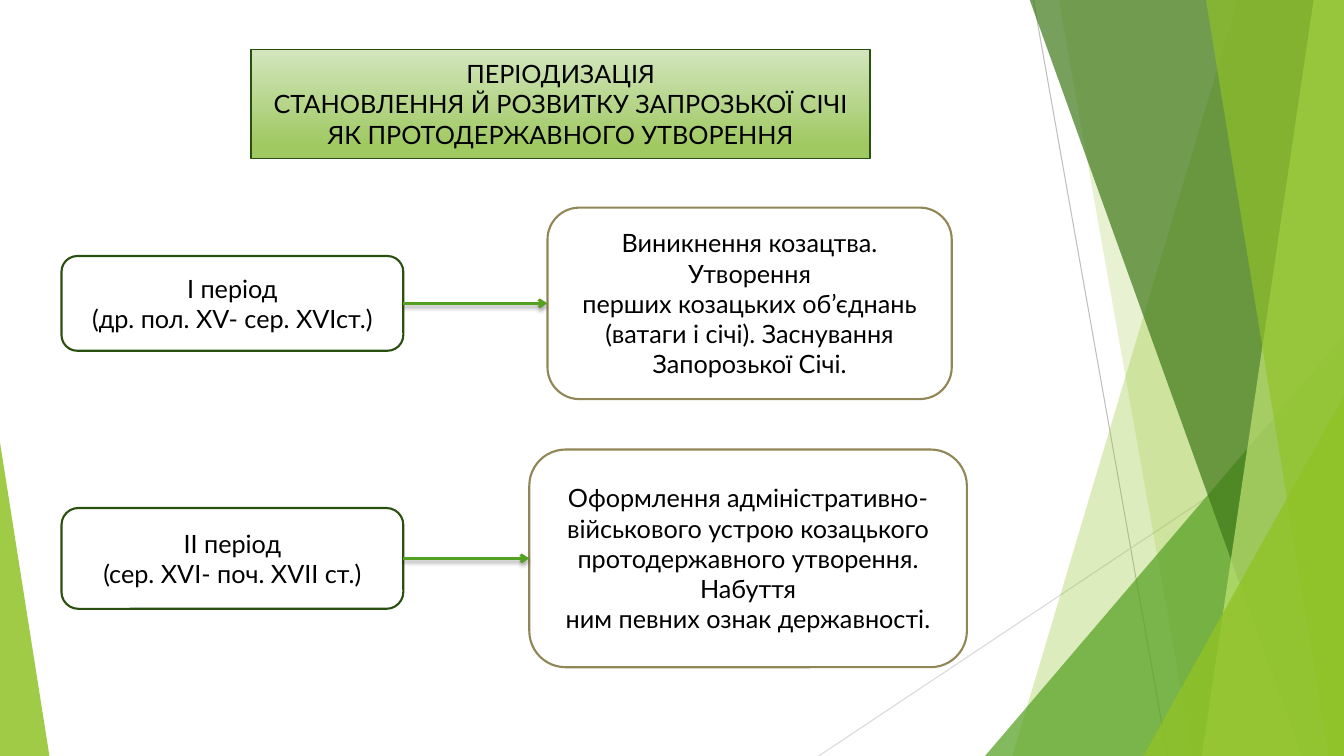
from dataclasses import dataclass

from lxml.etree import SubElement
from pptx import Presentation
from pptx.dml.color import RGBColor
from pptx.enum.shapes import MSO_CONNECTOR as Connector, MSO_SHAPE as Shape
from pptx.enum.text import MSO_ANCHOR as Anchor, MSO_AUTO_SIZE as AutoSize, PP_ALIGN as Align
from pptx.oxml.ns import qn
from pptx.util import Pt

PX = 9144  # EMU, 100 px to the inch
WIDTH, HEIGHT = 1333, 750
RIGHT_SIDE, LEFT_SIDE = 3, 1


@dataclass(frozen=True)
class Theme:
    font: str = "Lato"
    text_size: float = 18
    text: str = "000000"
    paper: str = "FFFFFF"
    lime: str = "90C226"
    pale_lime: str = "C0E474"
    green: str = "54A021"
    forest: str = "3F7819"
    dark_green: str = "2A5010"
    olive: str = "918655"
    heading_top: str = "D3E5BE"
    heading_bottom: str = "A0C962"
    grey: str = "BFBFBF"
    light_grey: str = "D9D9D9"


def rgb(code):
    return RGBColor.from_string(code)


class SlideBuilder:
    def __init__(self, slide, theme):
        self.slide = slide
        self.shapes = slide.shapes
        self.theme = theme

    def label(self, shape, text):
        frame = shape.text_frame
        frame.text = text
        frame.word_wrap = True
        frame.auto_size = AutoSize.NONE
        frame.vertical_anchor = Anchor.MIDDLE
        for paragraph in frame.paragraphs:
            paragraph.alignment = Align.CENTER
            for run in paragraph.runs:
                run.font.name = self.theme.font
                run.font.size = Pt(self.theme.text_size)
                run.font.color.rgb = rgb(self.theme.text)

    def outline(self, shape, color, width):
        shape.line.color.rgb = rgb(color)
        shape.line.width = Pt(width)

    def tint(self, shape, color, opacity):
        """Fill a borderless shape with a colour of the given opacity in percent."""
        shape.shadow.inherit = False
        shape.line.fill.background()
        shape.fill.solid()
        shape.fill.fore_color.rgb = rgb(color)
        color_node = shape._element.spPr.find(qn("a:solidFill"))[0]
        SubElement(color_node, qn("a:alpha"), val=str(opacity * 1000))

    def shard(self, top_x, bottom_x, color, opacity):
        """Draw a full-height band from a slanted left edge to the slide's right edge."""
        pen = self.shapes.build_freeform(top_x, -1, scale=PX)
        pen.add_line_segments([(WIDTH, -1), (WIDTH, HEIGHT), (bottom_x, HEIGHT)])
        self.tint(pen.convert_to_shape(), color, opacity)

    def corner(self, left, top, right, apex, color, opacity):
        """Draw a triangle standing on the slide's bottom edge."""
        triangle = self.shapes.add_shape(
            Shape.ISOSCELES_TRIANGLE,
            left * PX, top * PX, (right - left) * PX, (HEIGHT - top) * PX)
        triangle.adjustments[0] = apex
        self.tint(triangle, color, opacity)

    def line(self, start, end, color, width):
        """Draw a straight line and return it with its empty effect list."""
        connector = self.shapes.add_connector(
            Connector.STRAIGHT, *(value * PX for value in (*start, *end)))
        self.outline(connector, color, width)
        effects = SubElement(connector._element.spPr, qn("a:effectLst"))
        return connector, effects

    def heading(self, left, top, width, height, text):
        title = self.shapes.title
        title.left, title.top = left * PX, top * PX
        title.width, title.height = width * PX, height * PX
        geometry = SubElement(title._element.spPr, qn("a:prstGeom"), prst="roundRect")
        SubElement(geometry, qn("a:avLst"))
        title.fill.gradient()
        title.fill.gradient_angle = 270
        stops = ((0, self.theme.heading_top), (0.88, self.theme.heading_bottom))
        for stop, (position, color) in zip(title.fill.gradient_stops, stops):
            stop.position = position
            stop.color.rgb = rgb(color)
        self.outline(title, self.theme.dark_green, 1)
        self.label(title, text)

    def box(self, left, middle, width, height, border, text):
        """Draw a rounded box centred vertically on middle."""
        box = self.shapes.add_shape(
            Shape.ROUNDED_RECTANGLE,
            left * PX, (middle - height // 2) * PX, width * PX, height * PX)
        box.shadow.inherit = False
        box.fill.solid()
        box.fill.fore_color.rgb = rgb(self.theme.paper)
        self.outline(box, border, 1.5)
        self.label(box, text)
        return box

    def arrow(self, source, target):
        connector, effects = self.line((0, 0), (0, 0), self.theme.green, 2)
        connector.begin_connect(source, RIGHT_SIDE)
        connector.end_connect(target, LEFT_SIDE)
        SubElement(connector._element.spPr.find(qn("a:ln")), qn("a:tailEnd"), type="arrow")
        shadow = SubElement(
            effects, qn("a:outerShdw"), blurRad=str(Pt(3)), dist=str(Pt(2)),
            dir="5400000", rotWithShape="0")
        shade = SubElement(shadow, qn("a:srgbClr"), val=self.theme.text)
        SubElement(shade, qn("a:alpha"), val="35000")


def draw_backdrop(page):
    theme = page.theme
    page.line((1025, 0), (1158, HEIGHT), theme.grey, 0.75)
    page.line((WIDTH, 403), (812, HEIGHT), theme.light_grey, 0.75)
    page.shard(1228, 1004, theme.lime, 30)
    page.shard(1050, 1183, theme.lime, 20)
    page.corner(977, 333, WIDTH, 1, theme.green, 72)
    page.shard(1021, 1291, theme.forest, 70)
    page.shard(1303, 1192, theme.pale_lime, 70)
    page.shard(1196, 1318, theme.lime, 65)
    page.corner(1134, 393, WIDTH, 1, theme.lime, 80)
    page.corner(0, 439, 49, 0, theme.lime, 85)


def draw_periods(page):
    theme = page.theme
    # middle, period height, period text, then left, width, height and text of the events
    periods = (
        (301, 94, "I період\n(др. пол. ΧV- сер. ΧVІст.)",
         543, 401, 190,
         "Виникнення козацтва. Утворення\n"
         "перших козацьких об’єднань (ватаги і січі). Заснування Запорозької Січі."),
        (554, 100, "IІ період\n(сер. ΧVІ- поч. ΧVІІ ст.)",
         525, 434, 216,
         "Оформлення адміністративно-\n"
         "військового устрою козацького\n"
         "протодержавного утворення. Набуття\n"
         "ним певних ознак державності."),
    )
    for middle, height, dates, left, width, events_height, events in periods:
        period_box = page.box(61, middle, 339, height, theme.dark_green, dates)
        events_box = page.box(left, middle, width, events_height, theme.olive, events)
        page.arrow(period_box, events_box)


def main():
    deck = Presentation()
    deck.slide_width, deck.slide_height = WIDTH * PX, HEIGHT * PX
    title_only = deck.slide_layouts[5]
    page = SlideBuilder(deck.slides.add_slide(title_only), Theme())
    draw_backdrop(page)
    page.heading(249, 49, 614, 108,
                 "ПЕРІОДИЗАЦІЯ\n"
                 "СТАНОВЛЕННЯ Й РОЗВИТКУ ЗАПРОЗЬКОЇ СІЧІ\n"
                 "ЯК ПРОТОДЕРЖАВНОГО УТВОРЕННЯ")
    draw_periods(page)
    deck.save("out.pptx")


if __name__ == "__main__":
    main()
